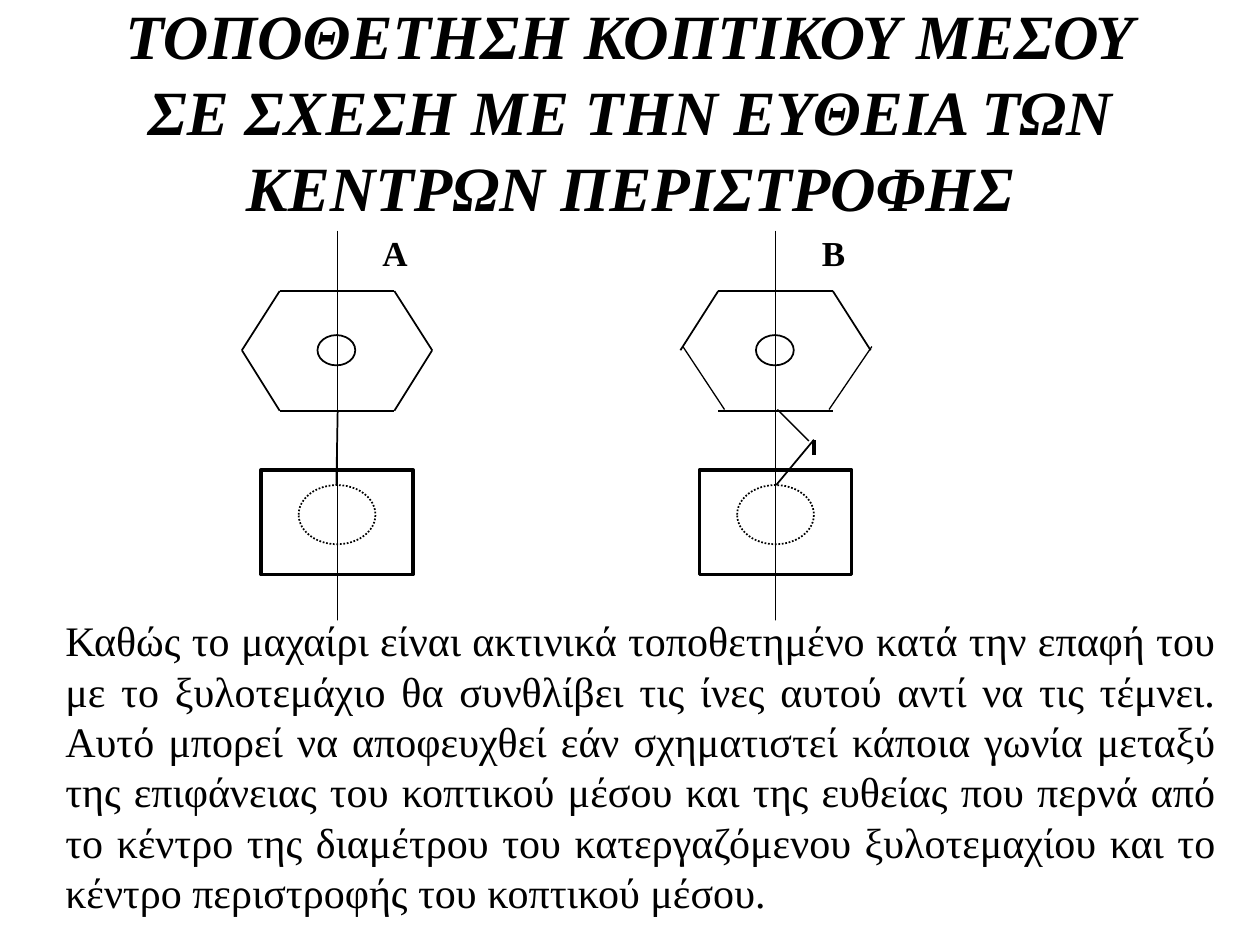
from dataclasses import dataclass

import pptx
import pptx.util
import pptx.dml.color
import pptx.enum.dml
import pptx.enum.shapes
import pptx.enum.text
import pptx.oxml

Inches, Pt = pptx.util.Inches, pptx.util.Pt
SHAPE = pptx.enum.shapes.MSO_SHAPE
ALIGN = pptx.enum.text.PP_ALIGN
ANCHOR = pptx.enum.text.MSO_ANCHOR
AUTO_SIZE = pptx.enum.text.MSO_AUTO_SIZE
DOTTED = pptx.enum.dml.MSO_LINE.ROUND_DOT


@dataclass(frozen=True)
class Theme:
    font: str = "Times New Roman"
    ink: pptx.dml.color.RGBColor = pptx.dml.color.RGBColor(0, 0, 0)
    title: float = 36
    label: float = 20
    body: float = 24
    axis: float = 0.25
    thin: float = 0.75
    normal: float = 1
    thick: float = 2


THEME = Theme()

TITLE = "ΤΟΠΟΘΕΤΗΣΗ ΚΟΠΤΙΚΟΥ ΜΕΣΟΥ ΣΕ ΣΧΕΣΗ ΜΕ ΤΗΝ ΕΥΘΕΙΑ ΤΩΝ ΚΕΝΤΡΩΝ ΠΕΡΙΣΤΡΟΦΗΣ"
BODY = (
    "Καθώς το μαχαίρι είναι ακτινικά τοποθετημένο κατά την επαφή του με το "
    "ξυλοτεμάχιο θα συνθλίβει τις ίνες αυτού αντί να τις τέμνει. Αυτό μπορεί να "
    "αποφευχθεί εάν σχηματιστεί κάποια γωνία μεταξύ της επιφάνειας του κοπτικού "
    "μέσου και της ευθείας που περνά από το κέντρο της διαμέτρου του "
    "κατεργαζόμενου ξυλοτεμαχίου και το κέντρο περιστροφής του κοπτικού μέσου."
)

# Corners of the cutter head, measured from the panel's top left
LEFT, RIGHT = (0, 0.95), (1.51, 0.95)
TOP_LEFT, TOP_RIGHT = (0.3, 0.48), (1.21, 0.48)
LOW_LEFT, LOW_RIGHT = (0.3, 1.43), (1.21, 1.43)
UPPER_HEAD = [(LEFT, TOP_LEFT), (TOP_LEFT, TOP_RIGHT), (TOP_RIGHT, RIGHT),
              (LOW_LEFT, LOW_RIGHT)]

# Each line is (start, end) with an optional width
RADIAL_LINES = UPPER_HEAD + [
    (LEFT, LOW_LEFT), (LOW_RIGHT, RIGHT),
    ((0.75, 2.02), (0.76, 1.43)),
]
ANGLED_LINES = UPPER_HEAD + [
    ((0.02, 0.92), (0.35, 1.42), THEME.thin),
    ((1.52, 0.92), (1.18, 1.42), THEME.thin),
    ((0.77, 1.42), (1.02, 1.67), THEME.thin),
    ((0.76, 2.02), (1.06, 1.66)),
    ((1.06, 1.78), (1.06, 1.66), THEME.thick),
]


def style_line(line, width, dash=None):
    line.color.rgb = THEME.ink
    line.width = Pt(width)
    if dash is not None:
        line.dash_style = dash


def write(tf, text, size, align, bold=False, italic=False):
    tf.text = text
    tf.word_wrap = True
    p = tf.paragraphs[0]
    p.alignment = align
    font = p.runs[0].font
    font.name, font.size = THEME.font, Pt(size)
    font.bold, font.italic = bold, italic
    font.color.rgb = THEME.ink


def add_title(s, left, top, width, height):
    sp = s.shapes.title
    sp.left, sp.top, sp.width, sp.height = map(Inches, (left, top, width, height))
    tf = sp.text_frame
    write(tf, TITLE, THEME.title, ALIGN.CENTER, bold=True, italic=True)
    tf.auto_size = AUTO_SIZE.NONE
    tf.vertical_anchor = ANCHOR.MIDDLE


def add_cutter_panel(s, left, top, label, lines):
    """Cutter head above its workpiece, on the line of rotation centres."""

    def segment(start, end, width=THEME.normal, dash=None):
        cn = s.shapes.add_connector(
            pptx.enum.shapes.MSO_CONNECTOR.STRAIGHT,
            Inches(left + start[0]), Inches(top + start[1]),
            Inches(left + end[0]), Inches(top + end[1]))
        style_line(cn.line, width, dash)
        spPr = cn._element.spPr
        spPr.append(spPr.makeelement(pptx.oxml.ns.qn("a:effectLst"), {}))

    def outline(kind, x, y, width, height, weight=THEME.normal, dash=None):
        sp = s.shapes.add_shape(kind, Inches(left + x), Inches(top + y),
                                Inches(width), Inches(height))
        sp.shadow.inherit = False
        sp.fill.background()
        style_line(sp.line, weight, dash)

    outline(SHAPE.RECTANGLE, 0.15, 1.9, 1.21, 0.83, THEME.thick)
    outline(SHAPE.OVAL, 0.45, 2.02, 0.61, 0.47, dash=DOTTED)
    outline(SHAPE.OVAL, 0.6, 0.83, 0.3, 0.24)
    for line in lines:
        segment(*line)
    segment((0.755, 0), (0.755, 3.09), THEME.axis, DOTTED)

    tb = s.shapes.add_textbox(Inches(left + 0.91), Inches(top), Inches(0.61), Inches(0.36))
    tf = tb.text_frame
    tf.margin_left = tf.margin_right = tf.margin_top = tf.margin_bottom = Inches(0.01)
    write(tf, label, THEME.label, ALIGN.CENTER, bold=True)


def add_explanation(s, left, top, width, height):
    tb = s.shapes.add_textbox(*map(Inches, (left, top, width, height)))
    write(tb.text_frame, BODY, THEME.body, ALIGN.JUSTIFY)
    tb.text_frame.auto_size = AUTO_SIZE.SHAPE_TO_FIT_TEXT


def main():
    prs = pptx.Presentation()
    prs.slide_width, prs.slide_height = Inches(10), Inches(7.5)
    s = prs.slides.add_slide(prs.slide_layouts.get_by_name("Title Only"))
    add_title(s, 0.75, 0.25, 8.5, 1.25)
    add_cutter_panel(s, 1.92, 1.83, "Α", RADIAL_LINES)
    add_cutter_panel(s, 5.4, 1.83, "Β", ANGLED_LINES)
    add_explanation(s, 0.42, 4.83, 9.33, 2.5)
    prs.save("out.pptx")


if __name__ == "__main__":
    main()
